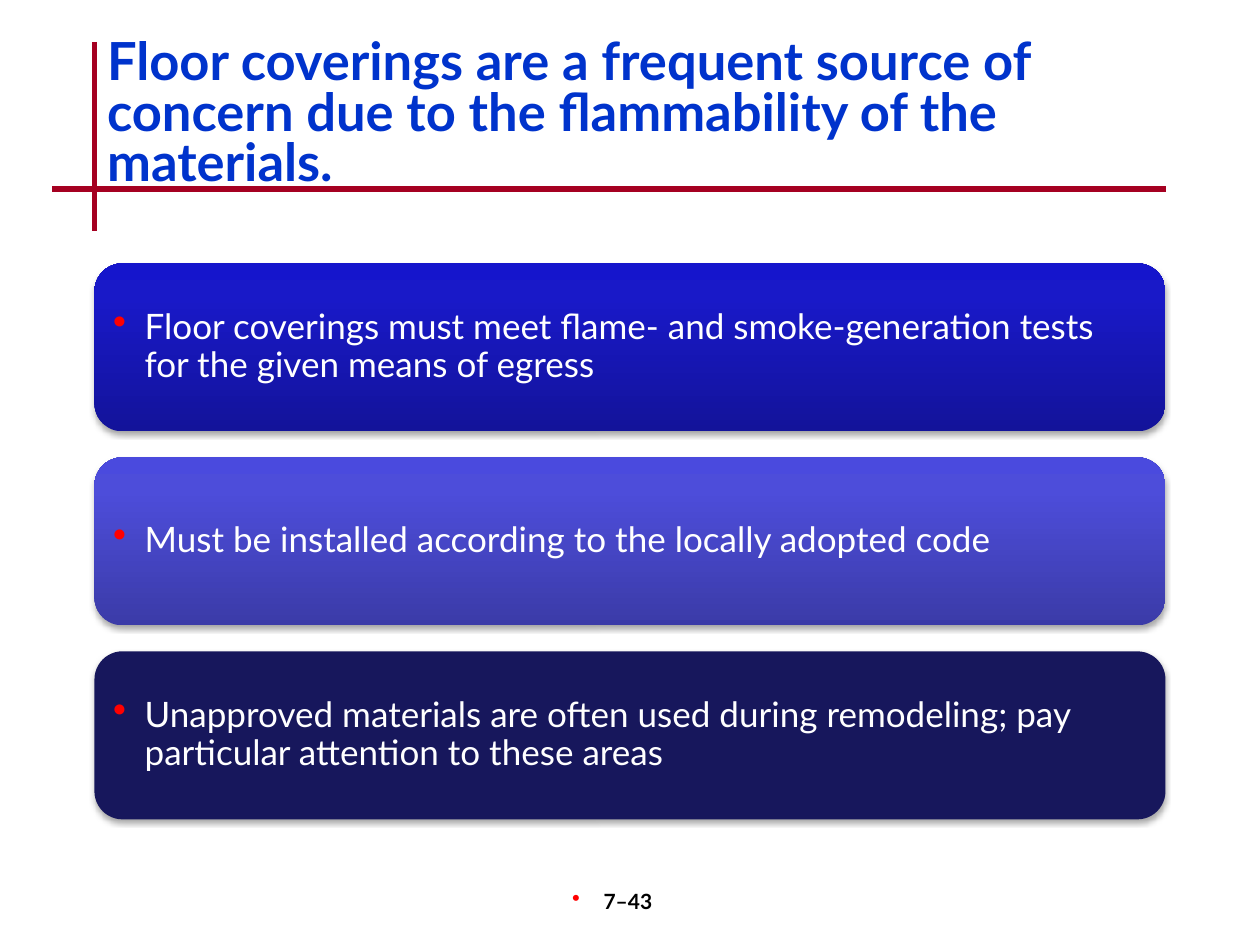
from copy import deepcopy
from dataclasses import dataclass

from lxml import etree
from pptx import Presentation
from pptx.dml.color import RGBColor
from pptx.enum.shapes import MSO_CONNECTOR, MSO_SHAPE
from pptx.enum.text import MSO_ANCHOR, MSO_AUTO_SIZE, PP_ALIGN
from pptx.oxml.ns import qn
from pptx.util import Pt

STRAIGHT = MSO_CONNECTOR.STRAIGHT
ROUNDED = MSO_SHAPE.ROUNDED_RECTANGLE
TOP, MIDDLE = MSO_ANCHOR.TOP, MSO_ANCHOR.MIDDLE
LEFT, CENTER = PP_ALIGN.LEFT, PP_ALIGN.CENTER
NO_AUTOFIT = MSO_AUTO_SIZE.NONE


@dataclass(frozen=True)
class Theme:
    font: str = "Lato"
    title_color: str = "0033CC"
    rule_color: str = "A50021"
    bullet_color: str = "FF0000"
    panel_text: str = "FFFFFF"
    page_color: str = "000000"
    shadow_color: str = "000000"
    title_size: float = 30
    panel_size: float = 20
    page_size: float = 12
    rule_width: float = 3


PANEL_LEFT, PANEL_TOP, PANEL_WIDTH, PANEL_HEIGHT = 54, 150.5, 612, 96
PANEL_PITCH = 110.85
BULLET_INDENT = 18
GRADIENT_POSITIONS = (0, 0.8, 1)
PANELS = (
    ("Floor coverings must meet flame- and smoke-generation tests for the given means of egress",
     ("13139A", "1919C8", "1515CC")),
    ("Must be installed according to the locally adopted code",
     ("3B3BA8", "4D4DDA", "4A4ADE")),
    ("Unapproved materials are often used during remodeling; pay particular attention to these areas",
     ("17175C",)),
)


class SlideBuilder:
    def __init__(self, slide, theme):
        self.slide = slide
        self.theme = theme

    def format_text(self, paragraph, size, color, bold=False):
        for run in paragraph.runs:
            run.font.name = self.theme.font
            run.font.size = Pt(size)
            run.font.bold = bold
            run.font.color.rgb = RGBColor.from_string(color)

    def add_bullet(self, paragraph):
        properties = paragraph._p.get_or_add_pPr()
        properties.set("marL", str(Pt(BULLET_INDENT)))
        properties.set("indent", str(-Pt(BULLET_INDENT)))
        color = etree.SubElement(properties, qn("a:buClr"))
        etree.SubElement(color, qn("a:srgbClr"), val=self.theme.bullet_color)
        etree.SubElement(properties, qn("a:buSzPct"), val="110000")
        etree.SubElement(properties, qn("a:buChar"), char="•")

    def title(self, text, left, top, width, height):
        shape = self.slide.shapes.title
        shape.left, shape.top = Pt(left), Pt(top)
        shape.width, shape.height = Pt(width), Pt(height)
        frame = shape.text_frame
        frame.text = text
        frame.word_wrap = True
        frame.auto_size = NO_AUTOFIT
        frame.vertical_anchor = TOP
        paragraph = frame.paragraphs[0]
        paragraph.alignment = LEFT
        paragraph.line_spacing = 0.8
        self.format_text(paragraph, self.theme.title_size, self.theme.title_color, True)

    def rule(self, start_x, start_y, end_x, end_y):
        connector = self.slide.shapes.add_connector(
            STRAIGHT, Pt(start_x), Pt(start_y), Pt(end_x), Pt(end_y))
        connector.line.color.rgb = RGBColor.from_string(self.theme.rule_color)
        connector.line.width = Pt(self.theme.rule_width)
        etree.SubElement(connector._element.spPr, qn("a:effectLst"))

    def fill(self, shape, colors):
        if len(colors) == 1:
            shape.fill.solid()
            shape.fill.fore_color.rgb = RGBColor.from_string(colors[0])
            return
        shape.fill.gradient()
        shape.fill.gradient_angle = 90
        stop_list = shape._element.spPr.find(".//" + qn("a:gsLst"))
        stop_list.append(deepcopy(stop_list[-1]))
        for stop, position, color in zip(shape.fill.gradient_stops, GRADIENT_POSITIONS, colors):
            stop.position = position
            stop.color.rgb = RGBColor.from_string(color)

    def add_shadow(self, shape):
        shape.shadow.inherit = False
        effects = shape._element.spPr.find(qn("a:effectLst"))
        shadow = etree.SubElement(
            effects, qn("a:outerShdw"), blurRad=str(Pt(3.1)), dist=str(Pt(1.8)),
            dir="5400000", rotWithShape="0")
        color = etree.SubElement(shadow, qn("a:srgbClr"), val=self.theme.shadow_color)
        etree.SubElement(color, qn("a:alpha"), val="35000")

    def panel(self, text, colors, top):
        shape = self.slide.shapes.add_shape(
            ROUNDED, Pt(PANEL_LEFT), Pt(top), Pt(PANEL_WIDTH), Pt(PANEL_HEIGHT))
        self.fill(shape, colors)
        shape.line.fill.background()
        self.add_shadow(shape)
        frame = shape.text_frame
        frame.text = text
        frame.word_wrap = True
        frame.vertical_anchor = MIDDLE
        frame.margin_left = frame.margin_right = Pt(6)
        frame.margin_top = frame.margin_bottom = Pt(6)
        paragraph = frame.paragraphs[0]
        self.add_bullet(paragraph)
        paragraph.alignment = LEFT
        paragraph.line_spacing = 0.9
        self.format_text(paragraph, self.theme.panel_size, self.theme.panel_text)

    def page_number(self, text, left, top, width, height):
        box = self.slide.shapes.add_textbox(Pt(left), Pt(top), Pt(width), Pt(height))
        frame = box.text_frame
        frame.text = text
        frame.word_wrap = True
        frame.margin_right = Pt(21.4)
        paragraph = frame.paragraphs[0]
        self.add_bullet(paragraph)
        paragraph.alignment = CENTER
        self.format_text(paragraph, self.theme.page_size, self.theme.page_color, True)


def main():
    presentation = Presentation()
    presentation.slide_width, presentation.slide_height = Pt(720), Pt(540)
    slide = presentation.slides.add_slide(presentation.slide_layouts[5])
    builder = SlideBuilder(slide, Theme())
    builder.rule(54, 24, 54, 132)
    builder.rule(30, 108, 666, 108)
    builder.title(
        "Floor coverings are a frequent source of concern due to the flammability of the materials.",
        54, 19.5, 612, 72)
    for index, (text, colors) in enumerate(PANELS):
        builder.panel(text, colors, PANEL_TOP + index * PANEL_PITCH)
    builder.page_number("7–43", 282, 504, 150, 36)
    presentation.save("out.pptx")


if __name__ == "__main__":
    main()
